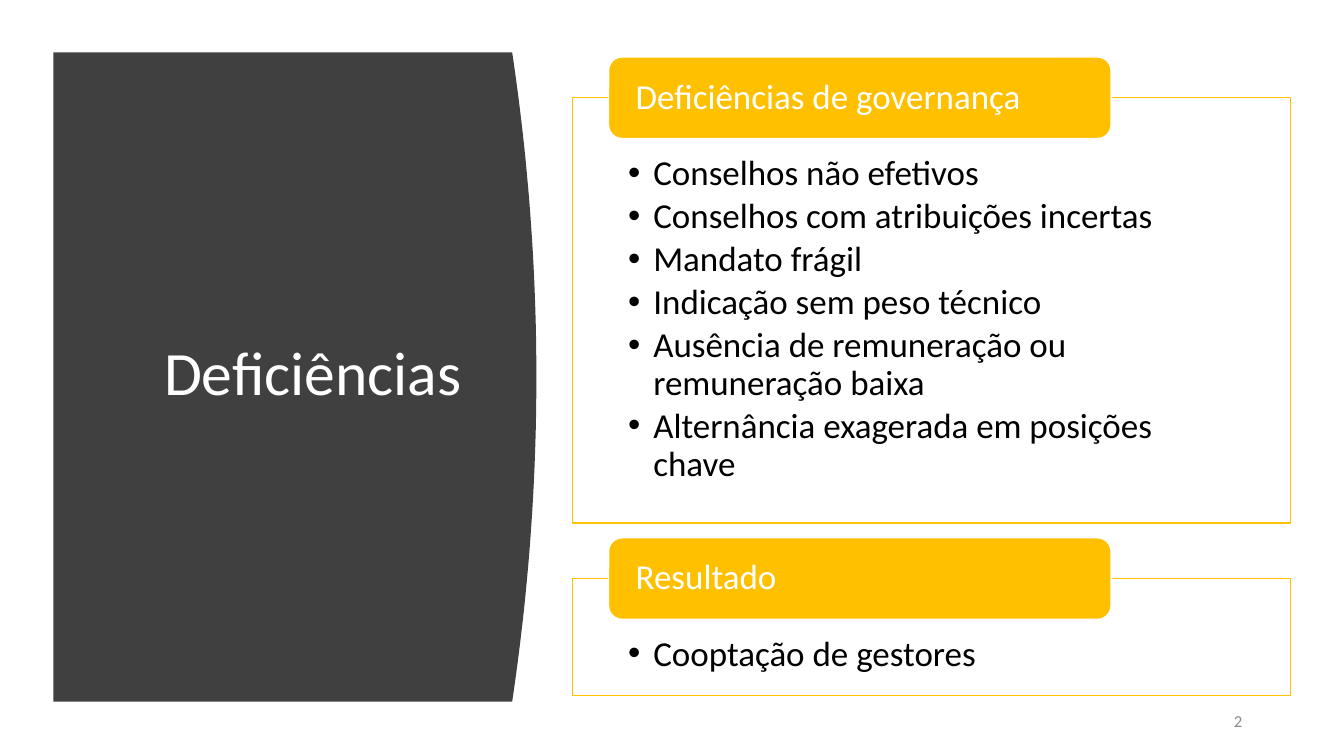
from lxml import etree
from pptx import Presentation
from pptx.dml.color import RGBColor
from pptx.enum.shapes import MSO_SHAPE
from pptx.enum.text import MSO_ANCHOR, PP_ALIGN
from pptx.oxml.ns import qn
from pptx.util import Inches, Pt

TITLE = "Deficiências"
NUMBER = "2"
# heading, top of its frame, height of its frame, points
GROUPS = [
    ("Deficiências de governança", 0.97, 4.22, [
        "Conselhos não efetivos",
        "Conselhos com atribuições incertas",
        "Mandato frágil",
        "Indicação sem peso técnico",
        "Ausência de remuneração ou remuneração baixa",
        "Alternância exagerada em posições chave",
    ]),
    ("Resultado", 5.74, 1.16, ["Cooptação de gestores"]),
]

WHITE = RGBColor(0xFF, 0xFF, 0xFF)
BLACK = RGBColor(0, 0, 0)
DARK = RGBColor(0x40, 0x40, 0x40)
GOLD = RGBColor(0xFF, 0xC0, 0x00)
GRAY = RGBColor(0x8C, 0x8C, 0x8C)
FONT = "Calibri"
RECT, ROUND = MSO_SHAPE.RECTANGLE, MSO_SHAPE.ROUNDED_RECTANGLE
TOP, MIDDLE = MSO_ANCHOR.TOP, MSO_ANCHOR.MIDDLE
LEFT, RIGHT = PP_ALIGN.LEFT, PP_ALIGN.RIGHT

WIDE, HIGH = 13.33, 7.5
FRAME_X, FRAME_W = 5.68, 7.12
TAB_X, TAB_W, TAB_H = FRAME_X + 0.05 * FRAME_W, 0.7 * FRAME_W, 0.81
PANEL_X, PANEL_Y, PANEL_W, PANEL_H = 0.53, 0.52, 4.55, 6.44
BULGE, STEPS = 0.24, 48

deck = Presentation()
deck.slide_width, deck.slide_height = Inches(WIDE), Inches(HIGH)
slide = deck.slides.add_slide(deck.slide_layouts[6])
shapes = slide.shapes


def write(shape, lines, size=25, color=WHITE, align=LEFT, anchor=MIDDLE,
          inset=(0.1, 0.05, 0.1, 0.05), spacing=0.9, after=0, bullet=False):
    frame = shape.text_frame
    frame.word_wrap = True
    frame.vertical_anchor = anchor
    (frame.margin_left, frame.margin_top,
     frame.margin_right, frame.margin_bottom) = map(Inches, inset)
    for i, line in enumerate(lines):
        para = frame.add_paragraph() if i else frame.paragraphs[0]
        para.text = line
        para.alignment = align
        para.line_spacing = spacing
        para.space_after = Pt(after)
        if bullet:
            props = para._p.get_or_add_pPr()
            props.set("marL", str(Inches(0.25)))
            props.set("indent", str(-Inches(0.25)))
            etree.SubElement(props, qn("a:buFont")).set("typeface", "Arial")
            etree.SubElement(props, qn("a:buChar")).set("char", "•")
        font = para.font
        font.name, font.size, font.color.rgb = FONT, Pt(size), color


def paint(shape, fill, line=None):
    shape.shadow.inherit = False
    shape.fill.solid()
    shape.fill.fore_color.rgb = fill
    if line is None:
        shape.line.fill.background()
    else:
        shape.line.color.rgb = line
        shape.line.width = Pt(1)


def add_box(kind, x, y, w, h, fill, line):
    box = shapes.add_shape(kind, *map(Inches, (x, y, w, h)))
    paint(box, fill, line)
    return box


def add_label(x, y, w, h, text, **style):
    write(shapes.add_textbox(*map(Inches, (x, y, w, h))), [text], **style)


def add_panel():
    """Dark panel whose right side bows outward as a parabola."""
    edge = []
    for i in range(STEPS + 1):
        part = i / STEPS
        x = PANEL_X + PANEL_W + BULGE * 4 * part * (1 - part)
        edge.append((Inches(x), Inches(PANEL_Y + PANEL_H * part)))
    pen = shapes.build_freeform(Inches(PANEL_X), Inches(PANEL_Y))
    pen.add_line_segments(edge + [(Inches(PANEL_X), Inches(PANEL_Y + PANEL_H))])
    paint(pen.convert_to_shape(), DARK)


add_panel()
add_label(0.94, 1.11, 3.74, 5.24, TITLE, size=44, align=RIGHT)
add_label(11.73, 6.95, 0.69, 0.4, NUMBER, size=12, color=GRAY,
          align=RIGHT, spacing=1.0, after=6)

for heading, top, height, points in GROUPS:
    frame = add_box(RECT, FRAME_X, top, FRAME_W, height, WHITE, GOLD)
    alpha = etree.SubElement(frame.fill._xPr.find(".//" + qn("a:srgbClr")),
                             qn("a:alpha"))
    alpha.set("val", "90000")
    write(frame, points, color=BLACK, anchor=TOP, after=3.75, bullet=True,
          inset=(0.55, 0.57, 0.55, 0.19))
    tab = add_box(ROUND, TAB_X, top - TAB_H / 2, TAB_W, TAB_H, GOLD, WHITE)
    write(tab, [heading], inset=(0.23, 0.04, 0.23, 0.04))

deck.save("out.pptx")
